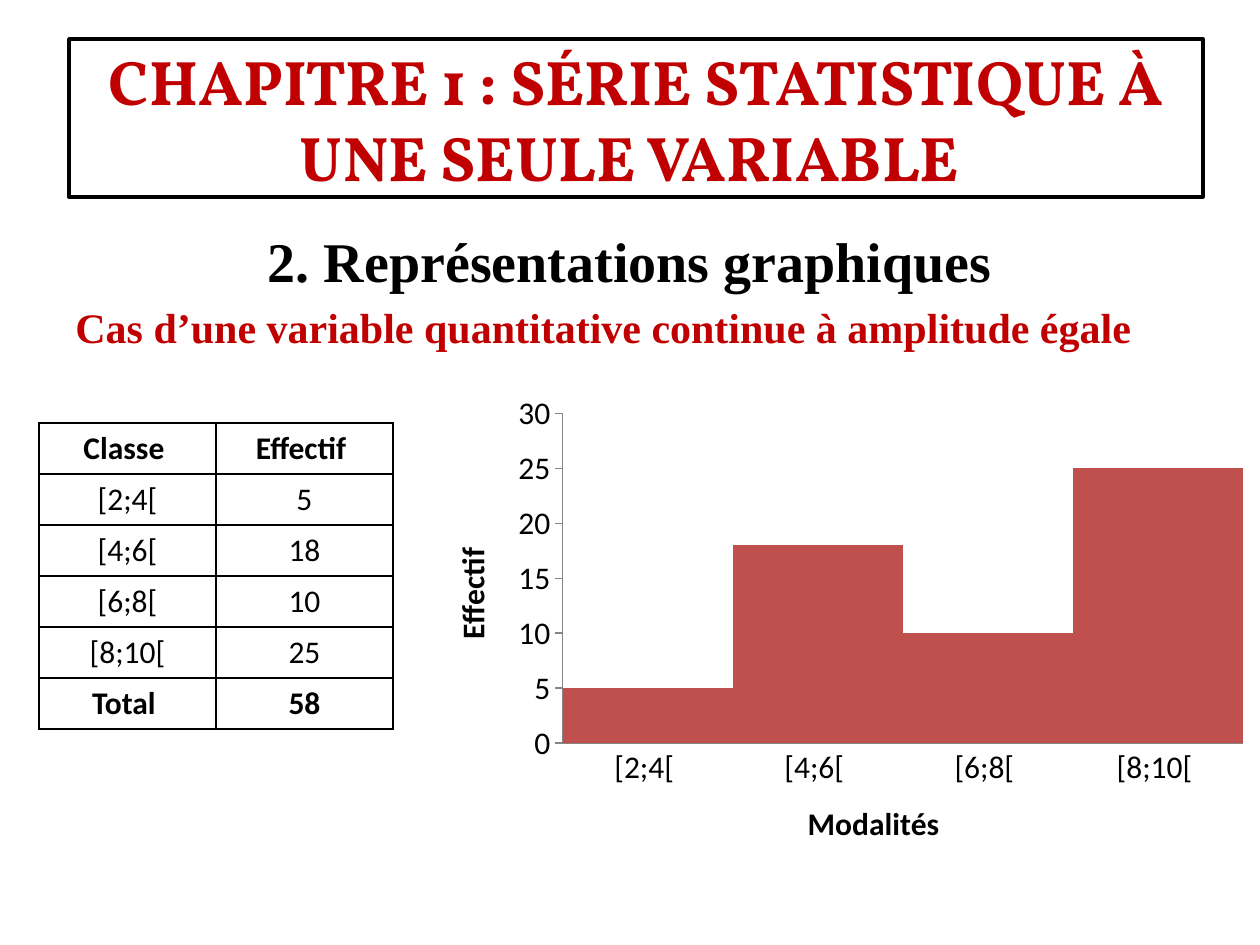
import pptx
import pptx.util
import pptx.chart.data
import pptx.dml.color
import pptx.enum.chart
import pptx.enum.shapes
import pptx.enum.text
import pptx.oxml
import pptx.oxml.ns

BLACK = pptx.dml.color.RGBColor(0x00, 0x00, 0x00)
WHITE = pptx.dml.color.RGBColor(0xFF, 0xFF, 0xFF)
RED = pptx.dml.color.RGBColor(0xC0, 0x00, 0x00)
BRICK = pptx.dml.color.RGBColor(0xC0, 0x50, 0x4D)
GRAY = pptx.dml.color.RGBColor(0x86, 0x86, 0x86)
CENTER = pptx.enum.text.PP_ALIGN.CENTER
LEFT = pptx.enum.text.PP_ALIGN.LEFT
TICK = pptx.enum.chart.XL_TICK_MARK
SCALE = 914400 / 126
SERIF = "Times New Roman"
SANS = "Calibri"
CLASSES = ["[2;4[", "[4;6[", "[6;8[", "[8;10["]
COUNTS = [5, 18, 10, 25]


class Deck:
    """Holds the style and the current slide, and adds each kind of element."""

    def __init__(self, width, height):
        self.show = pptx.Presentation()
        self.show.slide_width = self.emu(width)
        self.show.slide_height = self.emu(height)
        self.slide = self.show.slides.add_slide(self.show.slide_layouts[6])

    def emu(self, px):
        return pptx.util.Emu(round(px * SCALE))

    def box(self, *px):
        return [self.emu(n) for n in px]

    def style(self, font, name, size, color, bold=True):
        font.name = name
        font.size = pptx.util.Pt(size)
        font.color.rgb = color
        font.bold = bold

    def text(self, place, lines):
        frame = self.slide.shapes.add_textbox(*self.box(*place)).text_frame
        frame.word_wrap = True
        for i, (words, size, color, align) in enumerate(lines):
            para = frame.add_paragraph() if i else frame.paragraphs[0]
            para.text = words
            para.alignment = align
            para.space_before = pptx.util.Pt(size * 0.2)
            self.style(para.font, SERIF, size, color)

    def banner(self, place, words):
        kind = pptx.enum.shapes.MSO_SHAPE.RECTANGLE
        shape = self.slide.shapes.add_shape(kind, *self.box(*place))
        shape.shadow.inherit = False
        shape.fill.solid()
        shape.fill.fore_color.rgb = WHITE
        shape.line.color.rgb = BLACK
        shape.line.width = pptx.util.Pt(2)
        shape.text_frame.vertical_anchor = pptx.enum.text.MSO_ANCHOR.MIDDLE
        para = shape.text_frame.paragraphs[0]
        para.text = words
        para.alignment = CENTER
        self.style(para.font, "Vollkorn", 36, RED)

    def border(self, cell):
        props = cell._tc.get_or_add_tcPr()
        for i, side in enumerate(("lnL", "lnR", "lnT", "lnB")):
            props.insert(i, pptx.oxml.parse_xml(
                f'<a:{side} {pptx.oxml.ns.nsdecls("a")} w="12700"><a:solidFill>'
                f'<a:srgbClr val="{BLACK}"/></a:solidFill></a:{side}>'))

    def table(self, place, rows):
        grid = self.slide.shapes.add_table(
            len(rows), len(rows[0]), *self.box(*place)).table
        for r, row in enumerate(rows):
            for c, words in enumerate(row):
                cell = grid.cell(r, c)
                cell.fill.background()
                self.border(cell)
                para = cell.text_frame.paragraphs[0]
                para.text = words
                para.alignment = CENTER
                self.style(para.font, SANS, 18, BLACK, r in (0, len(rows) - 1))

    def axis(self, axis, title, tick):
        axis.has_major_gridlines = False
        axis.major_tick_mark = tick
        axis.minor_tick_mark = TICK.NONE
        axis.format.line.color.rgb = GRAY
        axis.has_title = True
        para = axis.axis_title.text_frame.paragraphs[0]
        para.text = title
        self.style(para.font, SANS, 18, BLACK)

    def chart(self, place, cats, vals, plot):
        data = pptx.chart.data.CategoryChartData()
        data.categories = cats
        data.add_series("Series 1", vals)
        kind = pptx.enum.chart.XL_CHART_TYPE.COLUMN_CLUSTERED
        chart = self.slide.shapes.add_chart(kind, *self.box(*place), data).chart
        chart.has_legend = False
        chart.has_title = False
        self.style(chart.font, SANS, 18, BLACK, False)
        self.axis(chart.category_axis, "Modalités  ", TICK.NONE)
        self.axis(chart.value_axis, "Effectif ", TICK.OUTSIDE)
        chart.value_axis.minimum_scale = 0
        chart.value_axis.maximum_scale = 30
        chart.value_axis.major_unit = 5
        bars = chart.plots[0]
        bars.gap_width = 0
        bars.vary_by_categories = False
        fill = bars.series[0].format.fill
        fill.solid()
        fill.fore_color.rgb = BRICK
        self.layout(chart, plot)

    def layout(self, chart, plot):
        area = chart._chartSpace.chart.plotArea
        for old in area.findall(pptx.oxml.ns.qn("c:layout")):
            area.remove(old)
        modes = "".join(f'<c:{n}Mode val="edge"/>' for n in "xy")
        sizes = "".join(f'<c:{n} val="{v}"/>' for n, v in zip("xywh", plot))
        area.insert(0, pptx.oxml.parse_xml(
            f'<c:layout {pptx.oxml.ns.nsdecls("c")}><c:manualLayout>'
            f'<c:layoutTarget val="inner"/>{modes}{sizes}'
            '</c:manualLayout></c:layout>'))


def main():
    deck = Deck(1260, 945)
    deck.text((63, 220, 1134, 624), [
        ("2. Représentations graphiques", 32, BLACK, CENTER),
        ("Cas d’une variable quantitative continue à amplitude égale",
         24, RED, LEFT)])
    deck.banner((69, 39, 1134, 158),
                "CHAPITRE 1 : SÉRIE STATISTIQUE À UNE SEULE VARIABLE ")
    rows = [(name, str(n)) for name, n in zip(CLASSES, COUNTS)]
    deck.table((39, 423, 354, 306), [
        ("Classe ", "Effectif "), *rows, ("Total ", str(sum(COUNTS)))])
    deck.chart((420, 384, 840, 492), [name + " " for name in CLASSES],
               COUNTS, (0.17, 0.06, 0.81, 0.67))
    deck.show.save("out.pptx")


if __name__ == "__main__":
    main()
